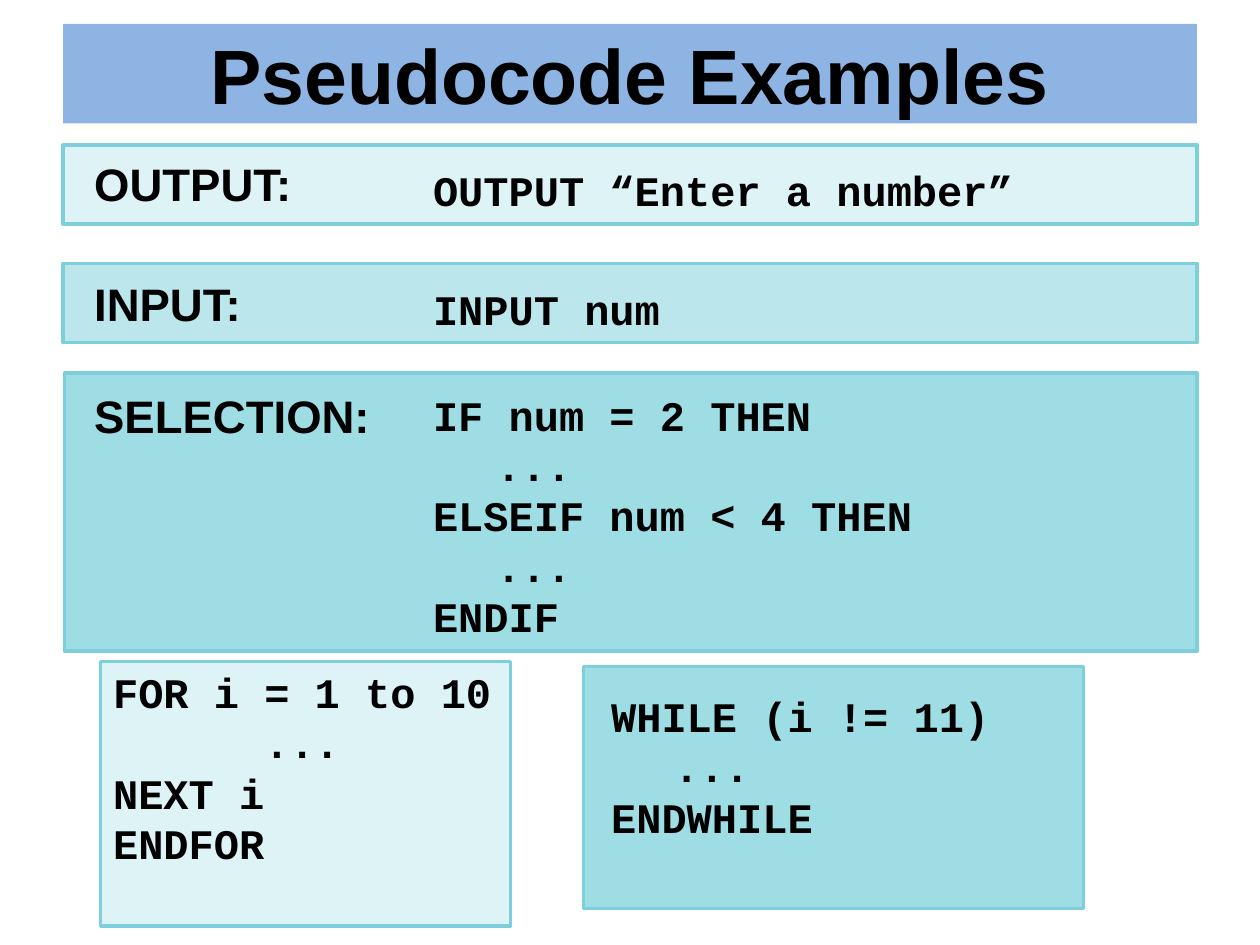
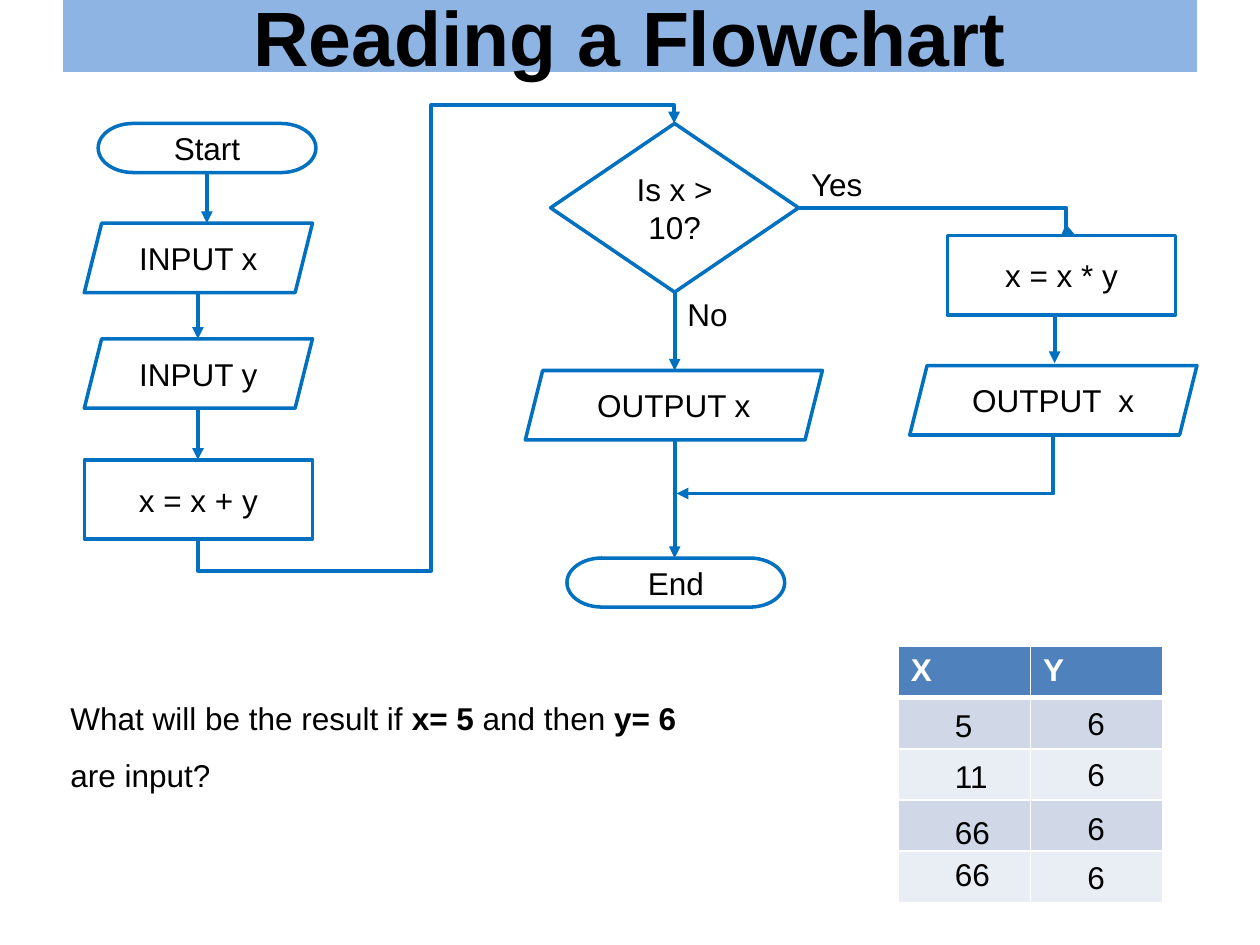
from lxml.etree import SubElement
from pptx import Presentation
from pptx.dml.color import RGBColor
from pptx.enum.shapes import MSO_CONNECTOR as Line, MSO_SHAPE as Kind
from pptx.enum.text import MSO_ANCHOR as Anchor, MSO_AUTO_SIZE as Fit, PP_ALIGN as Align
from pptx.oxml.ns import qn
from pptx.util import Cm, Pt

# Shared look
SANS, MONO = "Arial", "Courier New"
BLACK, WHITE = "000000", "FFFFFF"
TITLE_BAND = "8EB4E3"
PALE, LIGHT, MEDIUM, EDGE = "DEF3F6", "BAE6EC", "9FDDE5", "7CCFDB"
FLOW = "0070C0"
HEADER, ODD_ROW, EVEN_ROW = "4F81BD", "D0D8E8", "E9EDF4"
INDENT = Cm(1.27)


def color(value):
    return RGBColor.from_string(value)


def lengths(*values):
    return [Cm(value) for value in values]


def add_span(para, text, size=18, font=SANS, bold=False, ink=BLACK):
    span = para.add_run()
    span.text = text
    span.font.size = Pt(size)
    span.font.name = font
    span.font.bold = bold
    span.font.color.rgb = color(ink)


def add_title(page, text, top, height):
    title = page.shapes.title
    title.left, title.top, title.width, title.height = lengths(1.27, top, 22.86, height)
    title.fill.solid()
    title.fill.fore_color.rgb = color(TITLE_BAND)
    frame = title.text_frame
    frame.auto_size = Fit.NONE
    frame.vertical_anchor = Anchor.MIDDLE
    para = frame.paragraphs[0]
    para.alignment = Align.CENTER
    add_span(para, text, 44, bold=True)


def add_panel(page, kind, place, fill, edge):
    panel = page.shapes.add_shape(kind, *lengths(*place))
    panel.shadow.inherit = False
    panel.fill.solid()
    panel.fill.fore_color.rgb = color(fill)
    panel.line.color.rgb = color(edge)
    panel.line.width = Pt(2)
    return panel


def add_box(page, place, wrap=False):
    box = page.shapes.add_textbox(*lengths(*place))
    box.text_frame.word_wrap = wrap
    return box.text_frame


def add_label(page, text, place, wrap=False, **style):
    add_span(add_box(page, place, wrap).paragraphs[0], text, **style)


def add_code(page, lines, place, wrap=False, centered=False):
    """Write pseudocode; the lines of dots are indented or centred."""
    frame = add_box(page, place, wrap)
    for number, text in enumerate(lines):
        para = frame.add_paragraph() if number else frame.paragraphs[0]
        add_span(para, text, 24, MONO, bold=True)
        if text == "..." and centered:
            para.alignment = Align.CENTER
        elif text == "...":
            para._p.get_or_add_pPr().set("marL", str(INDENT))


def add_node(page, text, kind, place):
    frame = add_panel(page, kind, place, WHITE, FLOW).text_frame
    frame.word_wrap = True
    frame.vertical_anchor = Anchor.MIDDLE
    para = frame.paragraphs[0]
    para.alignment = Align.CENTER
    add_span(para, text)


def add_arrow(page, kind, start, end):
    arrow = page.shapes.add_connector(kind, *lengths(*start, *end))
    arrow.line.color.rgb = color(FLOW)
    arrow.line.width = Pt(2.25)
    SubElement(arrow.line._get_or_add_ln(), qn("a:tailEnd"), type="triangle")
    SubElement(arrow._element.spPr, qn("a:effectLst"))
    return arrow


def add_elbow(page, preset, place, bends=(), turn=0, flipped=False):
    """Draw a bent arrow in its unrotated frame, then turn it."""
    left, top, width, height = place
    arrow = add_arrow(page, Line.ELBOW, (left, top), (left + width, top + height))
    frame = arrow._element.spPr.find(qn("a:xfrm"))
    if turn:
        frame.set("rot", str(turn * 60000))
    if flipped:
        frame.set("flipH", "1")
        frame.set("flipV", "1")
    outline = arrow._element.spPr.find(qn("a:prstGeom"))
    outline.set("prst", preset)
    guides = outline.find(qn("a:avLst"))
    if guides is None:
        guides = SubElement(outline, qn("a:avLst"))
    for number, bend in enumerate(bends, 1):
        SubElement(guides, qn("a:gd"), name=f"adj{number}", fmla=f"val {round(bend * 100000)}")


def style_cell(cell, fill, bottom=1):
    properties = cell._tc.get_or_add_tcPr()
    for side, width in (("L", 1), ("R", 1), ("T", 1), ("B", bottom)):
        border = SubElement(properties, qn(f"a:ln{side}"), w=str(Pt(width)))
        paint = SubElement(border, qn("a:solidFill"))
        SubElement(paint, qn("a:srgbClr"), val=WHITE)
    cell.fill.solid()
    cell.fill.fore_color.rgb = color(fill)


def add_trace_table(page):
    place = lengths(18.11, 13.03, 5.33, 5.16)
    table = page.shapes.add_table(5, 2, *place).table
    for row in range(5):
        for column in range(2):
            cell = table.cell(row, column)
            if row == 0:
                style_cell(cell, HEADER, bottom=3)
                add_span(cell.text_frame.paragraphs[0], "XY"[column], bold=True, ink=WHITE)
            else:
                style_cell(cell, ODD_ROW if row % 2 else EVEN_ROW)
    # Traced values with their tops
    trace = [("5", 14.1, "6", 14.07), ("11", 15.14, "6", 15.09),
             ("66", 16.26, "6", 16.18), ("66", 17.12, "6", 17.17)]
    for x_value, x_top, y_value, y_top in trace:
        for value, left, top in ((x_value, 19, x_top), (y_value, 21.67, y_top)):
            add_label(page, value, (left, top, 1.4, 1.02))


def build_pseudocode(page):
    add_title(page, "Pseudocode Examples", 0.48, 2.01)

    # Full-width bands
    for place, fill in [((1.3, 7.52, 22.83, 5.61), MEDIUM),
                        ((1.27, 5.31, 22.86, 1.6), LIGHT),
                        ((1.27, 2.92, 22.86, 1.6), PALE)]:
        add_panel(page, Kind.RECTANGLE, place, fill, EDGE)
    for text, top, width in [("OUTPUT:", 3.02, 4.52), ("INPUT:", 5.44, 3.51),
                             ("SELECTION:", 7.7, 6.12)]:
        add_label(page, text, (1.65, top, width, 1.37), size=26, bold=True)
    add_code(page, ["OUTPUT “Enter a number”"], (8.48, 3.2, 12.29, 1.27))
    add_code(page, ["INPUT num"], (8.48, 5.59, 5.13, 1.27))
    add_code(page, ["IF num = 2 THEN", "...", "ELSEIF num < 4 THEN", "...", "ENDIF"],
             (8.48, 7.72, 10.95, 5.38), wrap=True)

    # Loops
    add_panel(page, Kind.RECTANGLE, (11.76, 13.44, 10.08, 4.88), MEDIUM, EDGE)
    add_panel(page, Kind.RECTANGLE, (2.03, 13.34, 8.26, 5.33), PALE, EDGE)
    add_code(page, ["FOR i = 1 to 10", "...", "NEXT i", "ENDFOR"],
             (2.03, 13.31, 8.2, 4.37), centered=True)
    add_code(page, ["WHILE (i != 11)", "...", "ENDWHILE"],
             (12.07, 13.79, 9.25, 3.33), wrap=True)


def build_flowchart(page):
    # Arrows
    for x, top, bottom in [(4.17, 3.48, 4.5), (3.99, 5.89, 6.83), (3.99, 8.23, 9.27),
                           (13.6, 5.89, 7.47), (13.6, 8.86, 11.25), (21.26, 6.35, 7.32)]:
        add_arrow(page, Line.STRAIGHT, (x, top), (x, bottom))
    add_elbow(page, "bentConnector5", (4.6, 1.88, 8.38, 9.6),
              bends=(-0.076, 0.49, 1.044), turn=90, flipped=True)
    add_elbow(page, "bentConnector2", (16.84, 5.56, 1.19, 7.59), turn=90)
    add_elbow(page, "bentConnector3", (16.1, 4.19, 5.56, 0.53), bends=(0.97,))

    add_title(page, "Reading a Flowchart", 0, 1.45)

    # Steps
    for text, kind, place in [
        ("Start", Kind.FLOWCHART_TERMINATOR, (1.98, 2.49, 4.39, 0.99)),
        ("INPUT x", Kind.PARALLELOGRAM, (1.7, 4.5, 4.6, 1.4)),
        ("INPUT y", Kind.PARALLELOGRAM, (1.7, 6.83, 4.6, 1.4)),
        ("x = x + y", Kind.RECTANGLE, (1.7, 9.27, 4.6, 1.6)),
        ("Is x > 10?", Kind.DIAMOND, (11.1, 2.49, 5, 3.4)),
        ("OUTPUT x", Kind.PARALLELOGRAM, (10.59, 7.47, 5.99, 1.4)),
        ("OUTPUT  x", Kind.PARALLELOGRAM, (18.34, 7.37, 5.79, 1.4)),
        ("End", Kind.FLOWCHART_TERMINATOR, (11.43, 11.25, 4.39, 0.99)),
        ("x = x * y", Kind.RECTANGLE, (19.1, 4.75, 4.6, 1.6)),
    ]:
        add_node(page, text, kind, place)
    add_label(page, "Yes", (16.1, 3.2, 1.75, 1.02), wrap=True)
    add_label(page, "No", (13.61, 5.82, 1.75, 1.02), wrap=True)

    # Question and trace table
    para = add_box(page, (1.17, 13.59, 13.16, 2.57), wrap=True).paragraphs[0]
    para.line_spacing = 1.5
    for text, bold in [("What will be the result if ", False), ("x= 5 ", True),
                       ("and then ", False), ("y= 6 ", True), ("are input?", False)]:
        add_span(para, text, bold=bold)
    add_trace_table(page)


def main():
    deck = Presentation()
    deck.slide_width, deck.slide_height = lengths(25.4, 19.05)
    title_only = deck.slide_layouts[5]
    for build in (build_pseudocode, build_flowchart):
        build(deck.slides.add_slide(title_only))
    deck.save("out.pptx")


if __name__ == "__main__":
    main()
